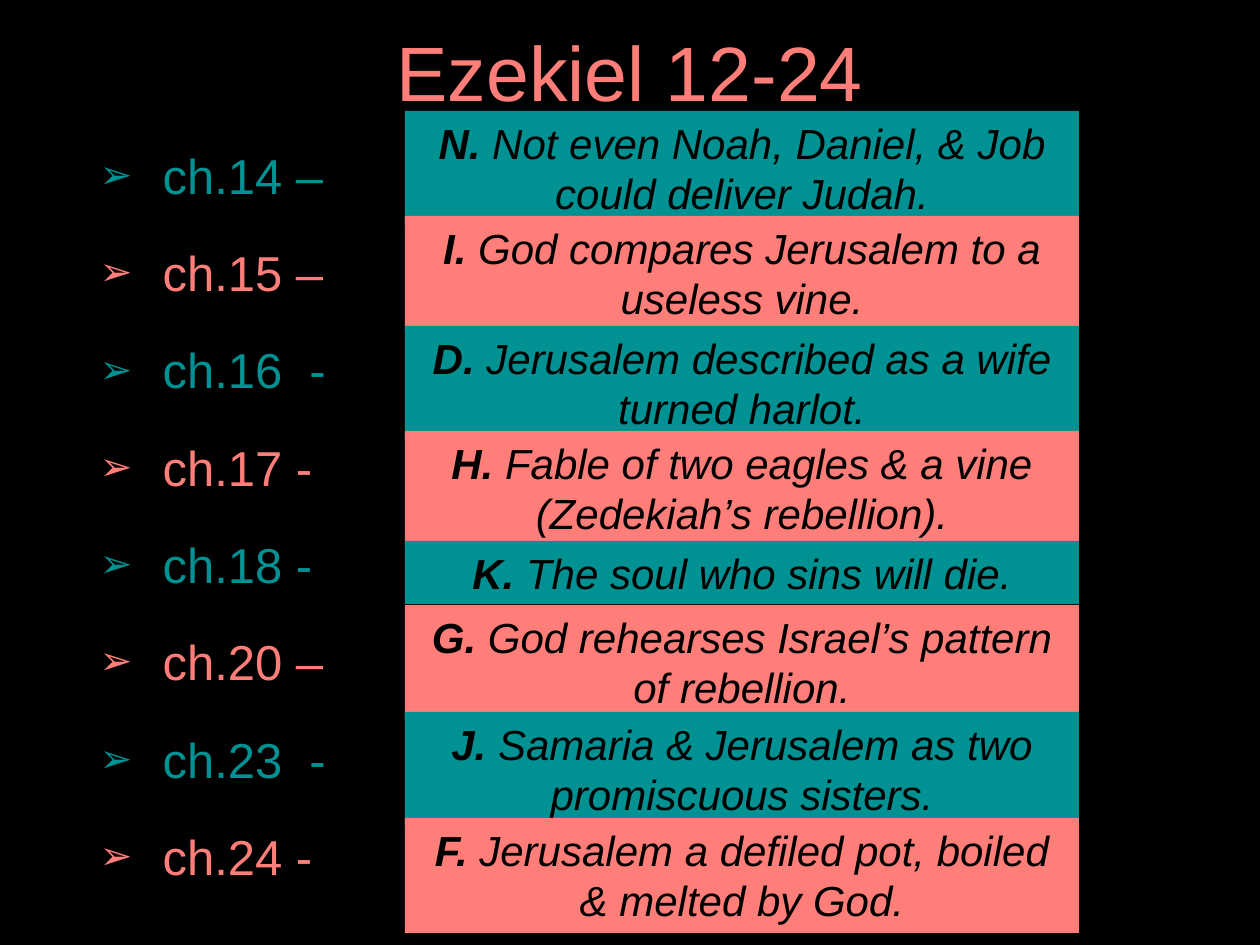
"""Builds the Ezekiel 12-24 chapter matching slide."""
from dataclasses import dataclass

from lxml import etree
from pptx import Presentation
from pptx import util as u
from pptx.dml.color import RGBColor
from pptx.enum import shapes, text
from pptx.oxml.ns import qn

PX = u.Inches(1) // 126


@dataclass(frozen=True)
class Theme:
    font: str = "Arial"
    back: str = "000000"
    teal: str = "009193"
    coral: str = "FF7E79"
    title: int = 44
    body: int = 28
    card: int = 24

    def tint(self, row: int) -> str:
        return self.coral if row % 2 else self.teal


@dataclass(frozen=True)
class Row:
    label: str
    key: str
    event: str
    top: int
    high: int = 115


THEME = Theme()
LEFT, WIDE = 405, 674
ROWS = [
    Row("ch.14 –", "N.", "Not even Noah, Daniel, & Job could deliver Judah.", 111),
    Row("ch.15 –", "I.", "God compares Jerusalem to a useless vine.", 216),
    Row("ch.16  -", "D.", "Jerusalem described as a wife turned harlot.", 326),
    Row("ch.17 -", "H.", "Fable of two eagles & a vine (Zedekiah’s rebellion).", 431),
    Row("ch.18 -", "K.", "The soul who sins will die.", 541, 63),
    Row("ch.20 –", "G.", "God rehearses Israel’s pattern of rebellion.", 605),
    Row("ch.23  -", "J.", "Samaria & Jerusalem as two promiscuous sisters.", 712),
    Row("ch.24 -", "F.", "Jerusalem a defiled pot, boiled & melted by God.", 818),
]


def style(para, size: int, tint: str) -> None:
    para.font.name = THEME.font
    para.font.size = u.Pt(size)
    para.font.color.rgb = RGBColor.from_string(tint)


def place(shape, left: int, top: int, wide: int, high: int) -> None:
    shape.left, shape.top = left * PX, top * PX
    shape.width, shape.height = wide * PX, high * PX


def bullet(para) -> None:
    props = para._p.get_or_add_pPr()
    props.set("marL", str(u.Inches(0.5)))
    props.set("indent", str(-u.Inches(0.5)))
    etree.SubElement(props, qn("a:buSzPct"), val="80000")
    etree.SubElement(props, qn("a:buFont"), typeface=THEME.font)
    etree.SubElement(props, qn("a:buChar"), char="➢")


def add_title(slide, words: str) -> None:
    title = slide.shapes.title
    place(title, 87, 20, 1086, 113)
    title.text_frame.auto_size = text.MSO_AUTO_SIZE.NONE
    para = title.text_frame.paragraphs[0]
    para.text = words
    para.line_spacing = 0.9
    para.alignment = text.PP_ALIGN.CENTER
    style(para, THEME.title, THEME.coral)


def add_list(slide, rows: list[Row]) -> None:
    body = slide.placeholders[1]
    place(body, 87, 139, 1086, 776)
    frame = body.text_frame
    frame.auto_size = text.MSO_AUTO_SIZE.NONE
    for i, row in enumerate(rows):
        para = frame.add_paragraph() if i else frame.paragraphs[0]
        para.text = row.label
        bullet(para)
        para.space_before = u.Pt(4 if i else 0)
        para.space_after = u.Pt(18)
        style(para, THEME.body, THEME.tint(i))


def add_card(slide, row: Row, tint: str) -> None:
    card = slide.shapes.add_shape(shapes.MSO_SHAPE.RECTANGLE, 0, 0, 0, 0)
    place(card, LEFT, row.top, WIDE, row.high)
    card.shadow.inherit = False
    card.fill.solid()
    card.fill.fore_color.rgb = RGBColor.from_string(tint)
    card.line.fill.background()
    frame = card.text_frame
    frame.word_wrap = True
    frame.auto_size = text.MSO_AUTO_SIZE.SHAPE_TO_FIT_TEXT
    frame.vertical_anchor = text.MSO_ANCHOR.TOP
    para = frame.paragraphs[0]
    para.alignment = text.PP_ALIGN.CENTER
    style(para, THEME.card, THEME.back)
    para.font.italic = True
    key = para.add_run()
    key.text = row.key + " "
    key.font.bold = True
    para.add_run().text = row.event


def main() -> None:
    deck = Presentation()
    deck.slide_width, deck.slide_height = u.Inches(10), u.Inches(7.5)
    slide = deck.slides.add_slide(deck.slide_layouts[1])
    fill = slide.background.fill
    fill.solid()
    fill.fore_color.rgb = RGBColor.from_string(THEME.back)
    add_title(slide, "Ezekiel 12-24")
    add_list(slide, ROWS)
    for i, row in enumerate(ROWS):
        add_card(slide, row, THEME.tint(i))
    deck.save("out.pptx")


if __name__ == "__main__":
    main()
